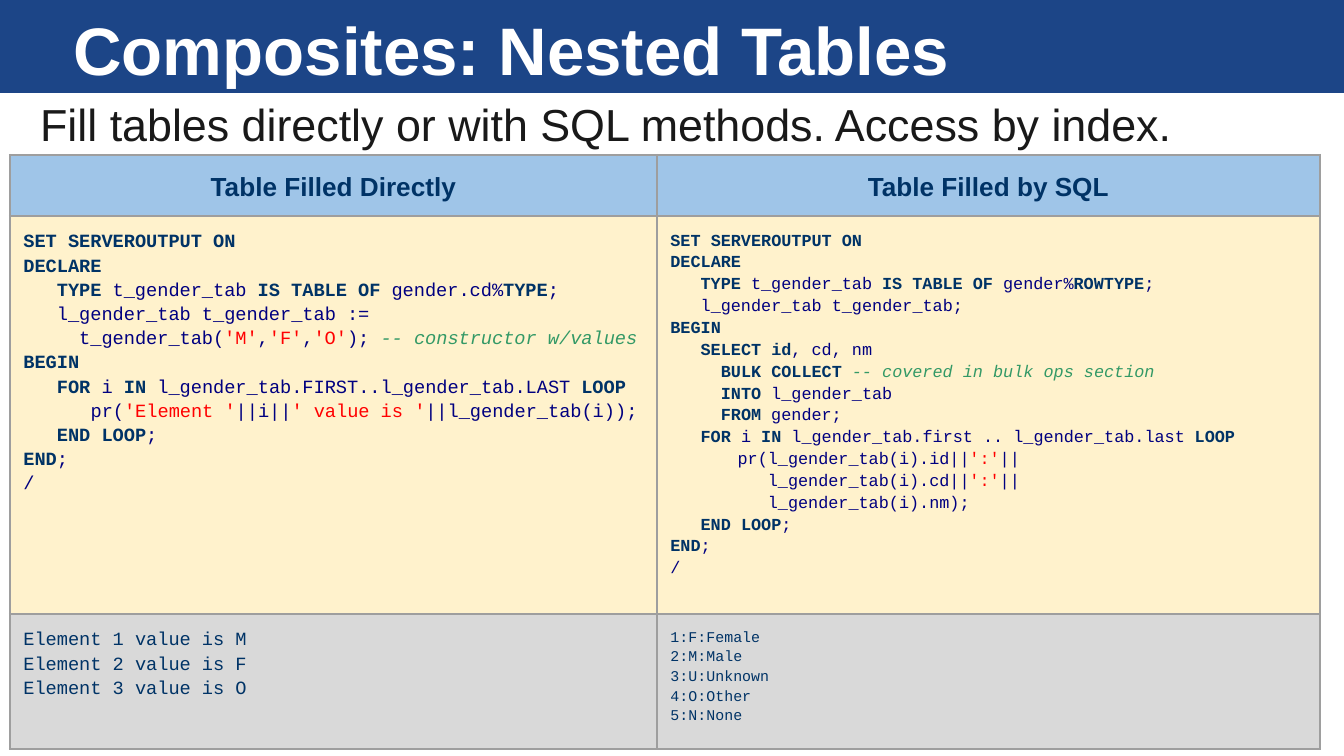
from pptx import Presentation
from pptx import util as u
from pptx.dml.color import RGBColor
from pptx.enum import shapes, text
from pptx.oxml.ns import qn
from lxml import etree

PX = 914400 * 10 / 1344  # the slide is 1344 px wide

WHITE = RGBColor(0xFF, 0xFF, 0xFF)
BANNER = RGBColor(0x1C, 0x45, 0x87)
INK = RGBColor(0x19, 0x19, 0x19)
NAVY = RGBColor(0x00, 0x33, 0x66)
CODE = RGBColor(0x00, 0x00, 0x80)
STRING = RGBColor(0xFF, 0x00, 0x00)
COMMENT = RGBColor(0x33, 0x99, 0x66)
BORDER = RGBColor(0x9E, 0x9E, 0x9E)
HEADER_FILL = RGBColor(0x9F, 0xC5, 0xE8)
CODE_FILL = RGBColor(0xFF, 0xF2, 0xCC)
OUTPUT_FILL = RGBColor(0xD9, 0xD9, 0xD9)

# Backticks enclose keywords
DIRECT_CODE = """`SET SERVEROUTPUT ON`
`DECLARE`
   `TYPE` t_gender_tab `IS TABLE OF` gender.cd%`TYPE`;
   l_gender_tab t_gender_tab :=
     t_gender_tab('M','F','O'); -- constructor w/values
`BEGIN`
   `FOR` i `IN` l_gender_tab.FIRST..l_gender_tab.LAST `LOOP`
  \tpr('Element '||i||' value is '||l_gender_tab(i));
   `END LOOP`;
`END`;
/"""
SQL_CODE = """`SET SERVEROUTPUT ON`
`DECLARE`
   `TYPE` t_gender_tab `IS TABLE OF` gender%`ROWTYPE`;
   l_gender_tab t_gender_tab;
`BEGIN`
   `SELECT id`, cd, nm
     `BULK COLLECT `-- covered in bulk ops section
     `INTO` l_gender_tab
     `FROM` gender;
   `FOR` i `IN` l_gender_tab.first .. l_gender_tab.last `LOOP`
  \tpr(l_gender_tab(i).id||':'||
  \t   l_gender_tab(i).cd||':'||
  \t   l_gender_tab(i).nm);
   `END LOOP`;
`END`;
/"""
DIRECT_OUTPUT = "Element 1 value is M\nElement 2 value is F\nElement 3 value is O"
SQL_OUTPUT = "1:F:Female\n2:M:Male\n3:U:Unknown\n4:O:Other\n5:N:None"


def px(length):
    return u.Emu(round(length * PX))


def split_line(line, base):
    """Return the (text, colour, bold, italic) pieces of one line."""
    code, dashes, comment = line.partition("--")
    pieces = []
    for i, part in enumerate(code.split("'")):
        if i % 2:
            pieces.append((f"'{part}'", STRING, False, False))
            continue
        for j, words in enumerate(part.split("`")):
            keyword = j % 2 == 1
            pieces.append((words, NAVY if keyword else base, keyword, False))
    pieces.append((dashes + comment, COMMENT, False, True))
    return [piece for piece in pieces if piece[0]]


presentation = Presentation()
presentation.slide_width, presentation.slide_height = px(1344), px(756)
slide = presentation.slides.add_slide(presentation.slide_layouts[5])

# Banner, placed behind the title
banner = slide.shapes.add_shape(shapes.MSO_SHAPE.RECTANGLE, 0, 0, px(1344), px(93))
banner.shadow.inherit = False
banner.fill.solid()
banner.fill.fore_color.rgb = BANNER
banner.line.fill.background()
slide.shapes._spTree.insert(2, banner._element)

# Title and subtitle
title = slide.shapes.title
title.left, title.top, title.width, title.height = px(60), px(5), px(1210), px(88)
subtitle = slide.shapes.add_textbox(px(16), px(93), px(1313), px(62))
for shape, wording, size, colour, bold in (
    (title, "Composites: Nested Tables", 36, WHITE, True),
    (subtitle, "Fill tables directly or with SQL methods. Access by index.", 24, INK, False),
):
    frame = shape.text_frame
    frame.text = wording
    frame.word_wrap = True
    frame.auto_size = text.MSO_AUTO_SIZE.NONE
    frame.vertical_anchor = text.MSO_ANCHOR.MIDDLE
    frame.margin_left = frame.margin_right = u.Inches(0.1)
    frame.margin_top = frame.margin_bottom = u.Inches(0.1)
    paragraph = frame.paragraphs[0]
    paragraph.alignment = text.PP_ALIGN.LEFT
    font = paragraph.runs[0].font
    font.name, font.size, font.bold = "Arial", u.Pt(size), bold
    font.color.rgb = colour
properties = subtitle.text_frame.paragraphs[0]._p.get_or_add_pPr()
properties.set("marL", str(px(67)))
properties.set("indent", str(px(-56)))

# Table: header, code and output rows
column_widths = (647, 663)
row_heights = (61, 398, 135)
table = slide.shapes.add_table(
    3, 2, px(10), px(155), px(sum(column_widths)), px(sum(row_heights))
).table
table.first_row = table.horz_banding = False
for column, width in zip(table.columns, column_widths):
    column.width = px(width)
for row, height in zip(table.rows, row_heights):
    row.height = px(height)

# Each row: fill, font, base colour, alignment, then (wording, size) per cell
row_styles = (
    (HEADER_FILL, "Arial", NAVY, text.PP_ALIGN.CENTER,
     (("`Table Filled Directly`", 14), ("`Table Filled by SQL`", 14))),
    (CODE_FILL, "Courier New", CODE, text.PP_ALIGN.LEFT,
     ((DIRECT_CODE, 10), (SQL_CODE, 9))),
    (OUTPUT_FILL, "Courier New", NAVY, text.PP_ALIGN.LEFT,
     ((DIRECT_OUTPUT, 10), (SQL_OUTPUT, 8))),
)
for row, (fill, font_name, base, alignment, contents) in zip(table.rows, row_styles):
    for cell, (wording, size) in zip(row.cells, contents):
        cell.margin_left = cell.margin_right = u.Inches(0.1)
        cell.margin_top = cell.margin_bottom = u.Inches(0.1)

        # Borders come before the fill in the cell properties
        cell_properties = cell._tc.get_or_add_tcPr()
        for side in ("lnL", "lnR", "lnT", "lnB"):
            line = etree.SubElement(cell_properties, qn(f"a:{side}"), w=str(u.Pt(1.5)))
            solid = etree.SubElement(line, qn("a:solidFill"))
            etree.SubElement(solid, qn("a:srgbClr"), val=str(BORDER))
        cell.fill.solid()
        cell.fill.fore_color.rgb = fill

        lines = wording.split("\n")
        cell.text_frame.text = "\n" * (len(lines) - 1)
        for paragraph, code_line in zip(cell.text_frame.paragraphs, lines):
            paragraph.alignment = alignment
            paragraph.line_spacing = 1.15
            for piece, colour, bold, italic in split_line(code_line, base):
                run = paragraph.add_run()
                run.text = piece
                font = run.font
                font.name, font.size = font_name, u.Pt(size)
                font.bold, font.italic = bold, italic
                font.color.rgb = colour

presentation.save("out.pptx")
